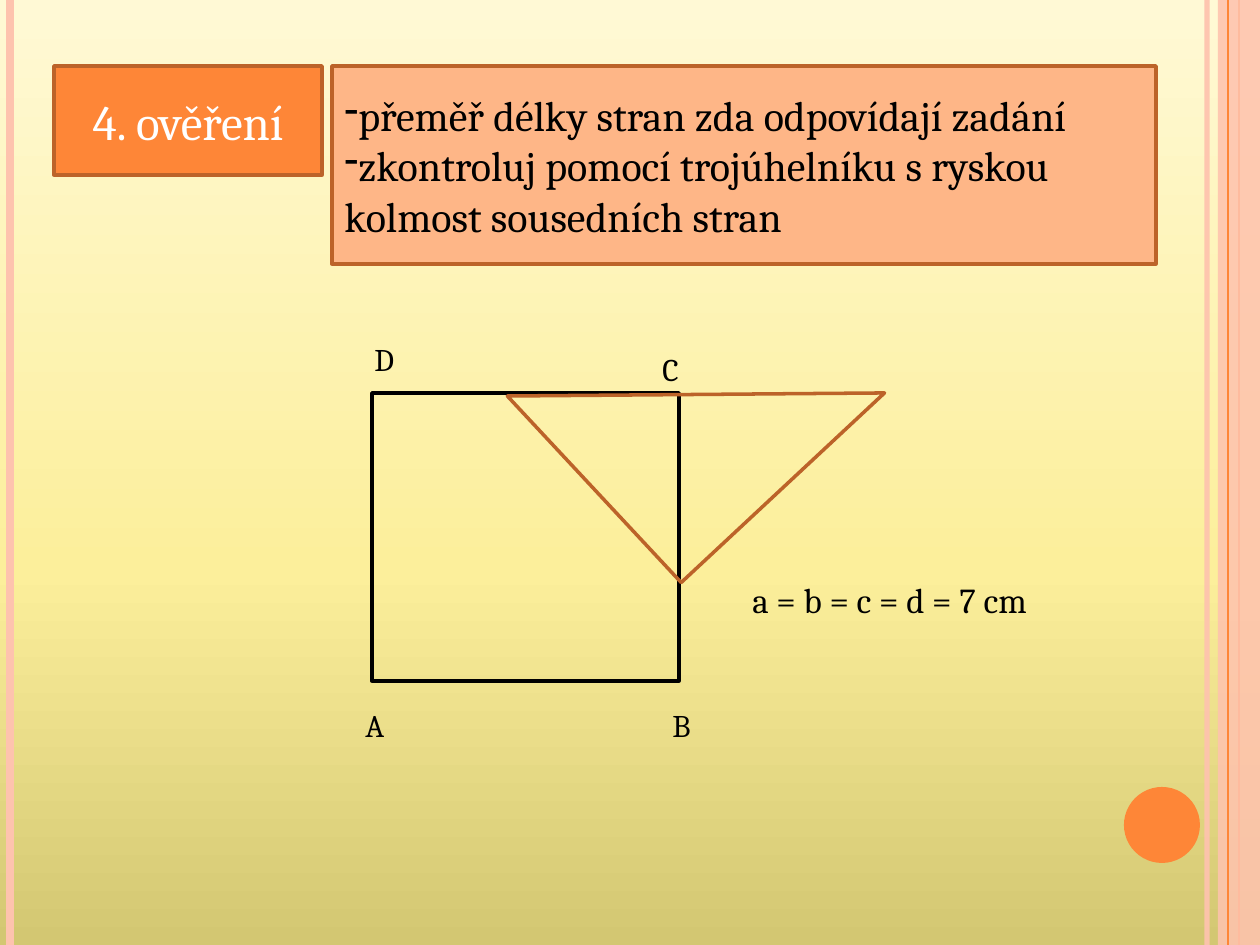
import copy
from dataclasses import dataclass

import pptx
import pptx.dml.color
import pptx.enum.shapes
import pptx.enum.text
import pptx.oxml.ns
import pptx.util
from lxml import etree

SHAPE = pptx.enum.shapes.MSO_SHAPE
ALIGN = pptx.enum.text.PP_ALIGN


@dataclass(frozen=True)
class Theme:
    """Colours, type sizes and line width of the slide."""
    font: str = "Cambria"
    orange: str = "FE8637"
    peach: str = "FEB687"
    pale: str = "FEC3AE"
    rust: str = "BC6329"
    black: str = "000000"
    white: str = "FFFFFF"
    gradient: tuple = ((0, "D3C772"), (0.4, "FCEF9B"), (1, "FFF9D5"))
    heading: int = 28
    body: int = 24
    formula: int = 20
    label: int = 18
    outline: int = 2


THEME = Theme()


def px(length):
    """Convert slide pixels to EMU."""
    return round(length * 914400 / 126)


def rgb(color):
    """Return the colour for a hex string."""
    return pptx.dml.color.RGBColor.from_string(color)


def add_child(parent, tag, **attributes):
    """Append a DrawingML element to its parent."""
    return etree.SubElement(parent, pptx.oxml.ns.qn(tag), attributes)


def set_opacity(element, percent):
    """Make the solid colour in an element partly transparent."""
    color = next(element.iter(pptx.oxml.ns.qn("a:srgbClr")))
    add_child(color, "a:alpha", val=str(percent * 1000))


def add_box(slide, kind, box, fill=None, line=None):
    """Add a preset shape with an optional fill and outline."""
    shape = slide.shapes.add_shape(kind, *map(px, box))
    shape.shadow.inherit = False
    if fill:
        shape.fill.solid()
        shape.fill.fore_color.rgb = rgb(fill)
    else:
        shape.fill.background()
    if line:
        shape.line.color.rgb = rgb(line)
        shape.line.width = pptx.util.Pt(THEME.outline)
    else:
        shape.line.fill.background()
    return shape


def write(shape, lines, size, color=THEME.black, align=ALIGN.LEFT):
    """Write one paragraph per line into a shape."""
    frame = shape.text_frame
    frame.word_wrap = True
    frame.text = "\n".join(lines)
    for paragraph in frame.paragraphs:
        paragraph.alignment = align
        paragraph.font.name = THEME.font
        paragraph.font.size = pptx.util.Pt(size)
        paragraph.font.color.rgb = rgb(color)


def add_label(slide, box, text, size):
    """Add a text box that grows with its text."""
    label = slide.shapes.add_textbox(*map(px, box))
    write(label, [text], size)
    label.text_frame.auto_size = pptx.enum.text.MSO_AUTO_SIZE.SHAPE_TO_FIT_TEXT


def add_rule(slide, box, x, color, width, opacity=100):
    """Add a vertical rule over the full height of the box."""
    left, top, _, height = box
    rule = slide.shapes.add_connector(
        pptx.enum.shapes.MSO_CONNECTOR.STRAIGHT,
        px(left + x), px(top), px(left + x), px(top + height))
    rule.line.color.rgb = rgb(color)
    rule.line.width = pptx.util.Pt(width)
    properties = rule.line._get_or_add_ln().getparent()
    add_child(properties, "a:effectLst")
    if opacity < 100:
        set_opacity(properties, opacity)


def paint_background(slide):
    """Fill the background with a vertical gradient."""
    fill = slide.background.fill
    fill.gradient()
    fill.gradient_angle = 90
    first = fill.gradient_stops[0]._gs
    first.addnext(copy.deepcopy(first))
    for stop, (position, color) in zip(fill.gradient_stops, THEME.gradient):
        stop.position = position
        stop.color.rgb = rgb(color)


def add_frame(slide, box):
    """Add the side rules, the right band and the orange disc."""
    left, top, width, height = box
    add_rule(slide, box, 1207, THEME.pale, 3, 93)
    add_rule(slide, box, 10, THEME.pale, 4.5)
    add_rule(slide, box, 1239, THEME.orange, 1.5)
    band = add_box(slide, SHAPE.RECTANGLE, (left + width - 42, top, 42, height), THEME.pale)
    set_opacity(band.fill._xPr, 87)
    add_rule(slide, box, 1228, THEME.orange, 0.75)
    add_box(slide, SHAPE.OVAL, (left + 1124, top + 787, 76, 76), THEME.orange)


def add_step(slide, box, title, instructions):
    """Add the step title with its instructions to the right."""
    left, top, width, height = box
    heading = add_box(slide, SHAPE.RECTANGLE, (left, top, 268, 109), THEME.orange, THEME.rust)
    write(heading, [title], THEME.heading, THEME.white, ALIGN.CENTER)
    panel = add_box(slide, SHAPE.RECTANGLE, (left + 278, top, width - 278, height),
                    THEME.peach, THEME.rust)
    write(panel, instructions, THEME.body)
    for paragraph in panel.text_frame.paragraphs:
        properties = paragraph._p.get_or_add_pPr()
        properties.set("marL", "0")
        properties.set("indent", "0")
        bullet = pptx.oxml.ns.qn("a:buChar")
        position = [child.tag for child in properties].index(pptx.oxml.ns.qn("a:defRPr"))
        properties.insert(position, etree.Element(bullet, char="-"))


def add_construction(slide, box):
    """Add the square, its vertices, the set square and the side lengths."""
    left, top, _, _ = box
    add_box(slide, SHAPE.RECTANGLE, box, line=THEME.black)
    vertices = (("A", -19, 307, 69), ("B", 288, 307, 100),
                ("C", 278, -49, 59), ("D", -10, -59, 59))
    for name, x, y, width in vertices:
        add_label(slide, (left + x, top + y, width, 50), name, THEME.label)
    set_square = add_box(slide, SHAPE.RIGHT_TRIANGLE, (left + 185, top - 126, 278, 255),
                         line=THEME.rust)
    set_square.rotation = 317
    add_label(slide, (left + 368, top + 179, 427, 55), "a = b = c = d = 7 cm", THEME.formula)


def main():
    """Build and save the slide."""
    presentation = pptx.Presentation()
    presentation.slide_width, presentation.slide_height = px(1260), px(945)
    slide = presentation.slides.add_slide(presentation.slide_layouts[6])
    paint_background(slide)
    add_frame(slide, (0, 0, 1260, 945))
    add_step(slide, (54, 66, 1102, 198), "4. ověření", [
        "přeměř délky stran zda odpovídají zadání",
        "zkontroluj pomocí trojúhelníku s ryskou kolmost sousedních stran"])
    add_construction(slide, (372, 393, 307, 288))
    presentation.save("out.pptx")


if __name__ == "__main__":
    main()
